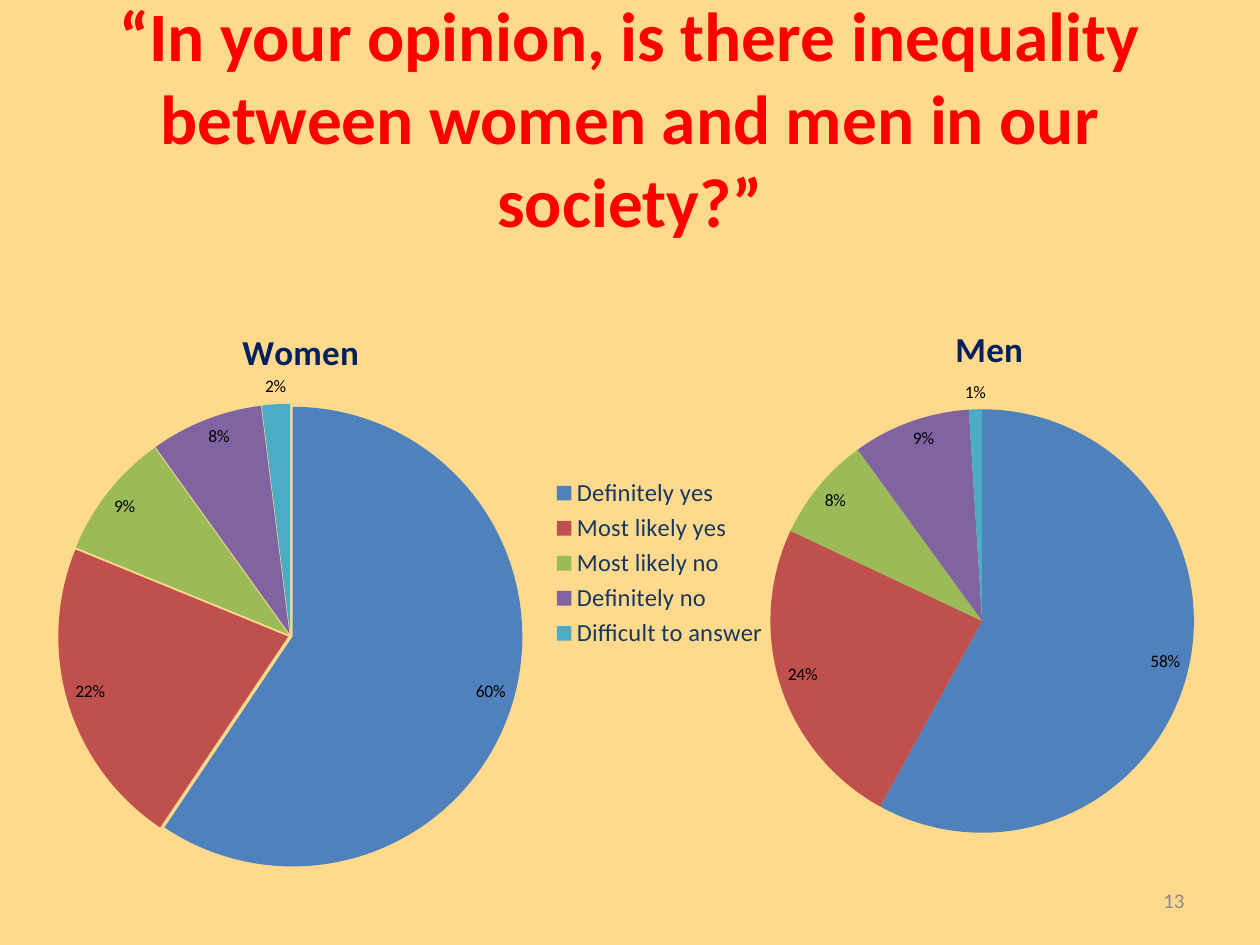
from dataclasses import dataclass
from typing import Optional

from lxml.etree import SubElement
from pptx import Presentation
from pptx.chart.data import CategoryChartData
from pptx.dml.color import RGBColor
from pptx.enum.chart import XL_CHART_TYPE as ChartType
from pptx.enum.chart import XL_LABEL_POSITION as LabelPosition
from pptx.enum.chart import XL_LEGEND_POSITION as LegendPosition
from pptx.enum.text import MSO_ANCHOR as Anchor
from pptx.enum.text import PP_ALIGN as Align
from pptx.oxml.ns import qn
from pptx.util import Cm, Pt

Box = tuple[float, float, float, float]
Spot = tuple[float, ...]


@dataclass(frozen=True)
class Theme:
    font: str = "Calibri"
    background: str = "FFD98C"
    question: str = "FF0000"
    heading: str = "002060"
    legend: str = "17375E"
    label: str = "000000"
    page: str = "8C8C8C"
    slices: tuple[str, ...] = ("4F81BD", "C0504D", "9BBB59", "8064A2", "4BACC6")
    question_size: float = 39.6
    heading_size: float = 20
    legend_size: float = 14
    page_size: float = 12
    label_size: float = 10


@dataclass(frozen=True)
class Survey:
    """Answers of one group; box is in cm, the other spots are chart fractions."""
    group: str
    shares: tuple[float, ...]
    box: Box
    heading_spot: Spot
    pie_spot: Spot
    legend_spot: Optional[Spot] = None
    explosion: int = 0


THEME = Theme()
ANSWERS = ("Definitely yes", "Most likely yes", "Most likely no",
           "Definitely no", "Difficult to answer")
SURVEYS = (
    Survey("Women", (0.6, 0.22, 0.09, 0.08, 0.02), (0.84, 4.65, 15.67, 13.97),
           (0.25, 0.13), (0.02, 0.25, 0.6, 0.67), (0.65, 0.35, 0.29, 0.26), 1),
    Survey("Men", (0.58, 0.24, 0.08, 0.09, 0.01), (13.13, 5.72, 13.34, 11.43),
           (0.45, 0.06), (0.18, 0.22, 0.64, 0.75)),
)


def style(font, size: float, color: str, bold: bool = False) -> None:
    font.name = THEME.font
    font.size = Pt(size)
    font.bold = bold
    font.color.rgb = RGBColor.from_string(color)


def place(part, index: int, spot: Spot) -> None:
    """Give a chart part a manual layout, as its child number index."""
    for old in part.findall(qn("c:layout")):
        part.remove(old)
    layout = SubElement(part, qn("c:layout"))
    part.insert(index, layout)
    manual = SubElement(layout, qn("c:manualLayout"))
    if part.tag == qn("c:plotArea"):
        SubElement(manual, qn("c:layoutTarget")).set("val", "inner")
    for mode in ("xMode", "yMode"):
        SubElement(manual, qn(f"c:{mode}")).set("val", "edge")
    for side, value in zip("xywh", spot):
        SubElement(manual, qn(f"c:{side}")).set("val", str(value))


def add_pie(slide, survey: Survey) -> None:
    shares = CategoryChartData(number_format="0%")
    shares.categories = ANSWERS
    shares.add_series(survey.group, survey.shares)
    chart = slide.shapes.add_chart(
        ChartType.PIE, *map(Cm, survey.box), shares).chart
    style(chart.font, THEME.label_size, THEME.label)

    heading = chart.chart_title
    heading.text_frame.text = survey.group
    style(heading.text_frame.paragraphs[0].runs[0].font,
          THEME.heading_size, THEME.heading, bold=True)
    heading.include_in_layout = False
    place(heading._element, 1, survey.heading_spot)
    place(chart._chartSpace.chart.plotArea, 0, survey.pie_spot)

    chart.has_legend = survey.legend_spot is not None
    if survey.legend_spot:
        chart.legend.position = LegendPosition.RIGHT
        chart.legend.include_in_layout = False
        style(chart.legend.font, THEME.legend_size, THEME.legend)
        place(chart.legend._element, 1, survey.legend_spot)

    pie = chart.plots[0]
    pie.vary_by_categories = True
    series = pie.series[0]
    for index, color in enumerate(THEME.slices):
        fill = series.points[index].format.fill
        fill.solid()
        fill.fore_color.rgb = RGBColor.from_string(color)
    if survey.explosion:
        explosion = SubElement(series._element, qn("c:explosion"))
        explosion.set("val", str(survey.explosion))
        series._element.find(qn("c:dPt")).addprevious(explosion)
        for point in series._element.findall(qn("c:dPt")):
            slice_explosion = SubElement(point, qn("c:explosion"))
            slice_explosion.set("val", str(survey.explosion))
            point.find(qn("c:spPr")).addprevious(slice_explosion)

    labels = series.data_labels
    labels.show_value = True
    labels.number_format = "0%"
    labels.number_format_is_linked = False
    labels.position = LabelPosition.INSIDE_END
    style(labels.font, THEME.label_size, THEME.label)
    smallest = series.points[len(ANSWERS) - 1].data_label
    style(smallest.font, THEME.label_size, THEME.label)
    smallest.position = LabelPosition.OUTSIDE_END


def add_question(slide, question: str) -> None:
    title = slide.shapes.title
    title.left, title.top, title.width, title.height = map(
        Cm, (1.27, 0.76, 22.86, 3.18))
    title.text_frame.text = question
    title.text_frame.vertical_anchor = Anchor.MIDDLE
    paragraph = title.text_frame.paragraphs[0]
    paragraph.alignment = Align.CENTER
    style(paragraph.runs[0].font, THEME.question_size, THEME.question, bold=True)


def add_page_number(slide, number: str) -> None:
    frame = slide.shapes.add_textbox(
        *map(Cm, (18.2, 17.65, 5.93, 1.01))).text_frame
    frame.word_wrap = True
    frame.vertical_anchor = Anchor.MIDDLE
    frame.text = number
    frame.paragraphs[0].alignment = Align.RIGHT
    style(frame.paragraphs[0].runs[0].font, THEME.page_size, THEME.page)


def main() -> None:
    deck = Presentation()
    deck.slide_width, deck.slide_height = Cm(25.4), Cm(19.05)
    slide = deck.slides.add_slide(deck.slide_layouts[5])
    slide.background.fill.solid()
    slide.background.fill.fore_color.rgb = RGBColor.from_string(THEME.background)
    add_question(slide, "“In your opinion, is there inequality between "
                        "women and men in our society?”")
    for survey in SURVEYS:
        add_pie(slide, survey)
    add_page_number(slide, "13")
    deck.save("out.pptx")


if __name__ == "__main__":
    main()
